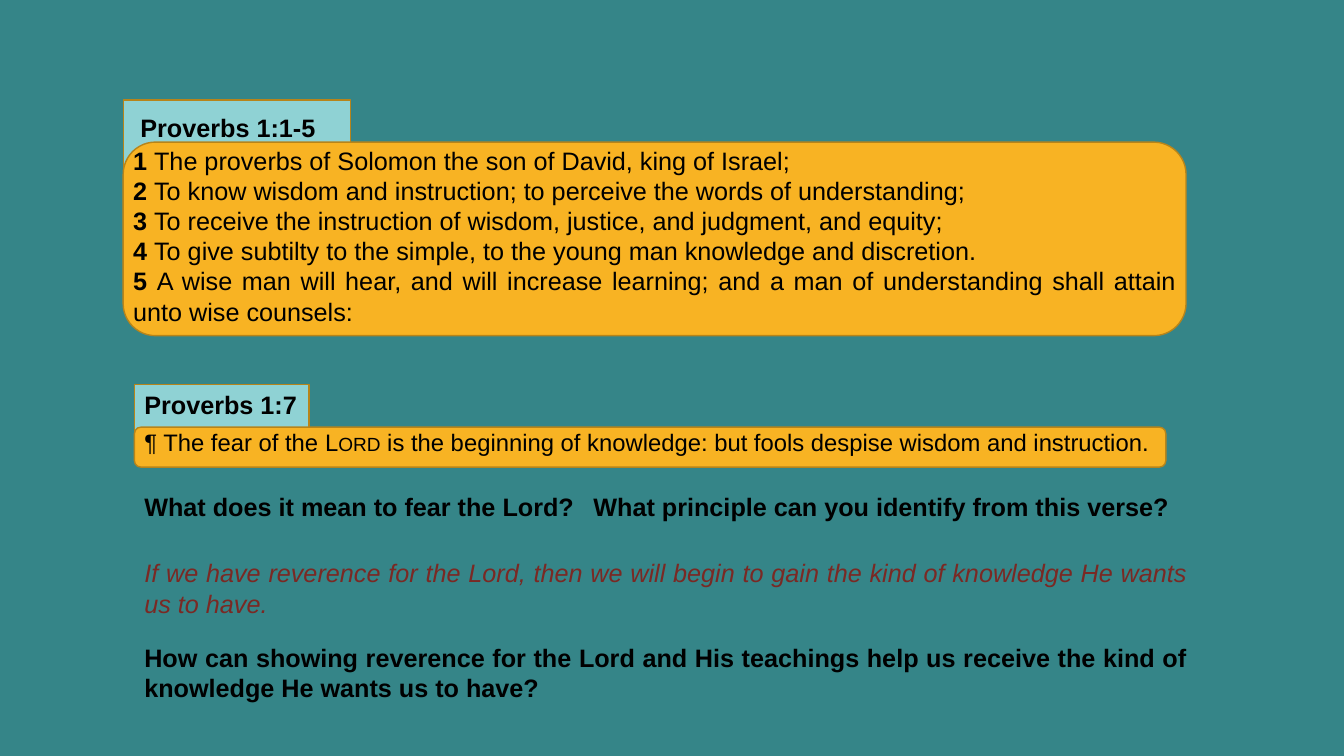
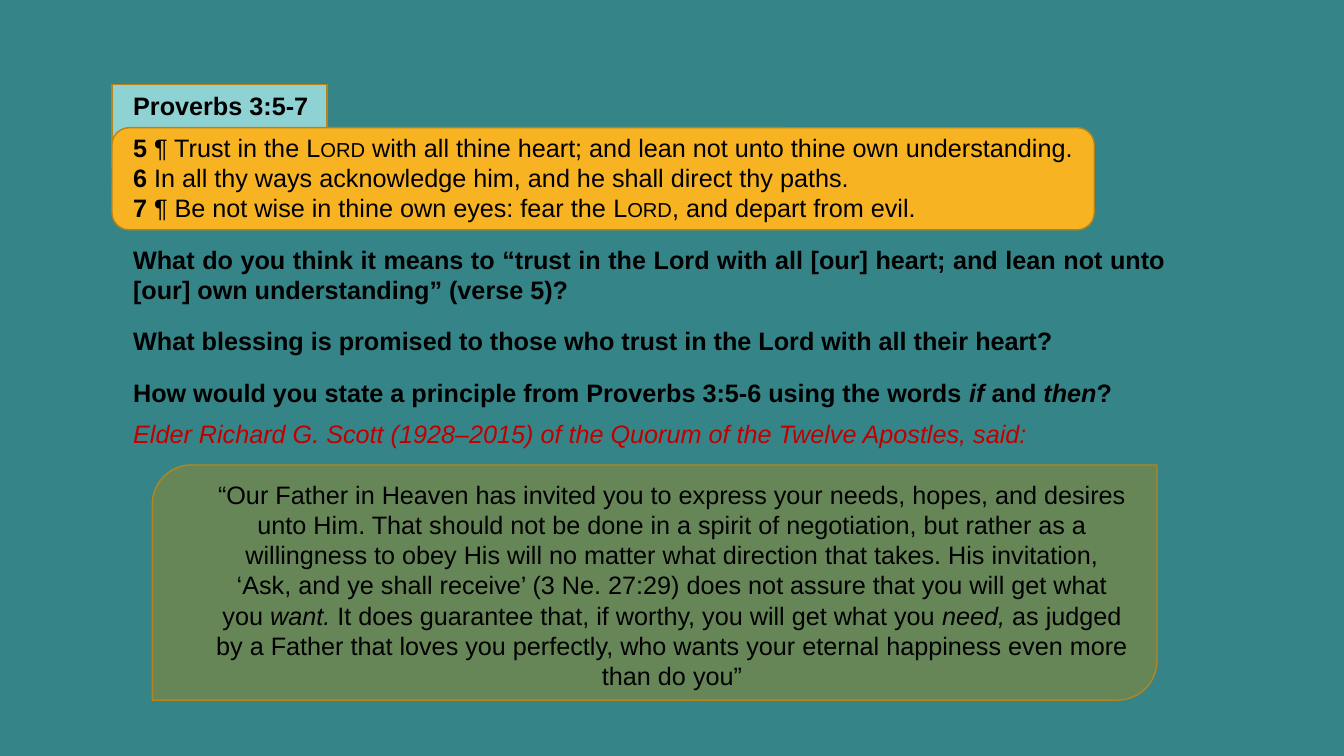
import pptx
import pptx.dml.color
import pptx.enum.shapes
import pptx.enum.text
import pptx.util

COLORS = {
    "background": "358588",
    "tab": "8FD2D4",
    "verses": "F8B323",
    "quote": "678658",
    "outline": "B7841A",
    "text": "000000",
    "principle": "7A2924",
    "speaker": "C00000",
}
FONT = "Arial"
SHAPES = pptx.enum.shapes.MSO_SHAPE
ALIGN = pptx.enum.text.PP_ALIGN
TITLE_ONLY = 5

presentation = pptx.Presentation()
presentation.slide_width = pptx.util.Inches(13.33)
presentation.slide_height = pptx.util.Inches(7.5)
COLUMN = presentation.slide_width / 120
ROW = presentation.slide_height / 100

background = presentation.slide_master.background.fill
background.solid()
background.fore_color.rgb = pptx.dml.color.RGBColor.from_string(COLORS["background"])


def place(shape, area, fill=None):
    """Set left, top, width and height in grid units; a filled shape gets the outline too."""
    left, top, width, height = area
    shape.left, shape.width = int(left * COLUMN), int(width * COLUMN)
    shape.top, shape.height = int(top * ROW), int(height * ROW)
    if fill:
        shape.shadow.inherit = False
        shape.fill.solid()
        shape.fill.fore_color.rgb = pptx.dml.color.RGBColor.from_string(COLORS[fill])
        shape.line.color.rgb = pptx.dml.color.RGBColor.from_string(COLORS["outline"])
        shape.line.width = pptx.util.Pt(1)
    return shape


def write(shape, *paragraphs, style="", size=18, color="text",
          align=ALIGN.JUSTIFY, wrap=True, left=0.1, top=0.05):
    """Each paragraph is a string or a list of (text, style); b bold, i italic, s small caps."""
    frame = shape.text_frame
    frame.word_wrap = wrap
    frame.auto_size = pptx.enum.text.MSO_AUTO_SIZE.NONE
    frame.vertical_anchor = pptx.enum.text.MSO_ANCHOR.TOP
    frame.margin_left = pptx.util.Inches(left)
    frame.margin_top = pptx.util.Inches(top)
    for index, content in enumerate(paragraphs):
        paragraph = frame.add_paragraph() if index else frame.paragraphs[0]
        paragraph.alignment = align
        for text, run_style in [(content, style)] if isinstance(content, str) else content:
            run = paragraph.add_run()
            run.text = text
            run.font.name = FONT
            run.font.size = pptx.util.Pt(size)
            run.font.bold = "b" in run_style
            run.font.italic = "i" in run_style
            run.font.color.rgb = pptx.dml.color.RGBColor.from_string(COLORS[color])
            if "s" in run_style:
                run.font._element.set("cap", "small")


label = {"style": "b", "align": ALIGN.LEFT, "wrap": False}

slide_contents = [
    {
        "title": ("Proverbs 1:1-5", (11, 13.2, 20.3, 8.9), {"left": 0.17, "top": 0.12}),
        "shapes": [
            (SHAPES.RECTANGLE, (12, 50.9, 15.6, 7.5), "tab"),
            (SHAPES.ROUNDED_RECTANGLE, (12, 56.5, 92.1, 5.3), "verses"),
            (SHAPES.ROUNDED_RECTANGLE, (11, 18.8, 94.9, 25.6), "verses"),
        ],
        "texts": [
            ((11, 18.5, 94.9, 25.6), [
                [("1 ", "b"), ("The proverbs of Solomon the son of David, king of Israel;", "")],
                [("2 ", "b"), ("To know wisdom and instruction; to perceive the words of understanding;", "")],
                [("3 ", "b"), ("To receive the instruction of wisdom, justice, and judgment, and equity;", "")],
                [("4 ", "b"), ("To give subtilty to the simple, to the young man knowledge and discretion.", "")],
                [("5 ", "b"), ("A wise man will hear, and will increase learning; and a man of "
                               "understanding shall attain unto wise counsels:", "")],
            ], {}),
            ((12, 50.9, 15.6, 5.3), ["Proverbs 1:7"], label),
            ((12, 55.9, 97, 5.2), [
                [("¶ The fear of the ", ""), ("Lord", "s"),
                 (" is the beginning of knowledge: but fools despise wisdom and instruction.", "")],
            ], {"size": 17}),
            ((12, 64.3, 40.6, 5.3), ["What does it mean to fear the Lord?"], label),
            ((52.1, 64.3, 53.7, 5.3), ["What principle can you identify from this verse?"], label),
            ((12, 73.1, 94.9, 9.5), [
                "If we have reverence for the Lord, then we will begin to gain the kind of "
                "knowledge He wants us to have.",
            ], {"style": "i", "color": "principle"}),
            ((12, 84.3, 94.9, 9.5), [
                "How can showing reverence for the Lord and His teachings help us receive "
                "the kind of knowledge He wants us to have?",
            ], {"style": "b"}),
        ],
    },
    {
        "title": ("Proverbs 3:5-7", (10, 11.2, 19.2, 10.9), {"left": 0.21, "top": 0.06}),
        "shapes": [
            (SHAPES.ROUNDED_RECTANGLE, (10, 16.9, 87.7, 13.5), "verses"),
            (SHAPES.ROUND_2_DIAG_RECTANGLE, (13.6, 61.5, 89.7, 31.1), "quote"),
        ],
        "texts": [
            ((11, 16.8, 95.7, 13.5), [
                [("5 ", "b"), ("¶ Trust in the ", ""), ("Lord", "s"),
                 (" with all thine heart; and lean not unto thine own understanding.", "")],
                [("6 ", "b"), ("In all thy ways acknowledge him, and he shall direct thy paths.", "")],
                [("7 ", "b"), ("¶ Be not wise in thine own eyes: fear the ", ""), ("Lord", "s"),
                 (", and depart from evil.", "")],
            ], {}),
            ((11, 31.6, 94, 9.5), [
                "What do you think it means to “trust in the Lord with all [our] heart; and "
                "lean not unto [our] own understanding” (verse 5)?",
            ], {"style": "b"}),
            ((11, 42.4, 85.1, 5.3), [
                "What blessing is promised to those who trust in the Lord with all their heart?",
            ], {"style": "b"}),
            ((11, 49.2, 94, 5.3), [
                [("How would you state a principle from Proverbs 3:5-6 using the words ", "b"),
                 ("if", "bi"), (" and ", "b"), ("then", "bi"), ("?", "b")],
            ], {}),
            ((11, 54.7, 83.4, 5.3), [
                "Elder Richard G. Scott (1928–2015) of the Quorum of the Twelve Apostles, said:",
            ], {"style": "i", "color": "speaker", "align": ALIGN.LEFT}),
            ((18.3, 62.7, 83.4, 29.6), [
                [("“Our Father in Heaven has invited you to express your needs, hopes, and "
                  "desires unto Him. That should not be done in a spirit of negotiation, but "
                  "rather as a willingness to obey His will no matter what direction that "
                  "takes. His invitation, ‘Ask, and ye shall receive’ (3 Ne. 27:29) does not "
                  "assure that you will get what you ", ""),
                 ("want.", "i"),
                 (" It does guarantee that, if worthy, you will get what you ", ""),
                 ("need,", "i"),
                 (" as judged by a Father that loves you perfectly, who wants your eternal "
                  "happiness even more than do you”", "")],
            ], {"align": ALIGN.CENTER}),
        ],
    },
]

for content in slide_contents:
    slide = presentation.slides.add_slide(presentation.slide_layouts[TITLE_ONLY])
    title, area, margins = content["title"]
    write(place(slide.shapes.title, area, "tab"), title, **label, **margins)
    for kind, area, fill in content["shapes"]:
        place(slide.shapes.add_shape(kind, 0, 0, 0, 0), area, fill)
    for area, paragraphs, text_format in content["texts"]:
        write(place(slide.shapes.add_textbox(0, 0, 0, 0), area), *paragraphs, **text_format)

presentation.save("out.pptx")
